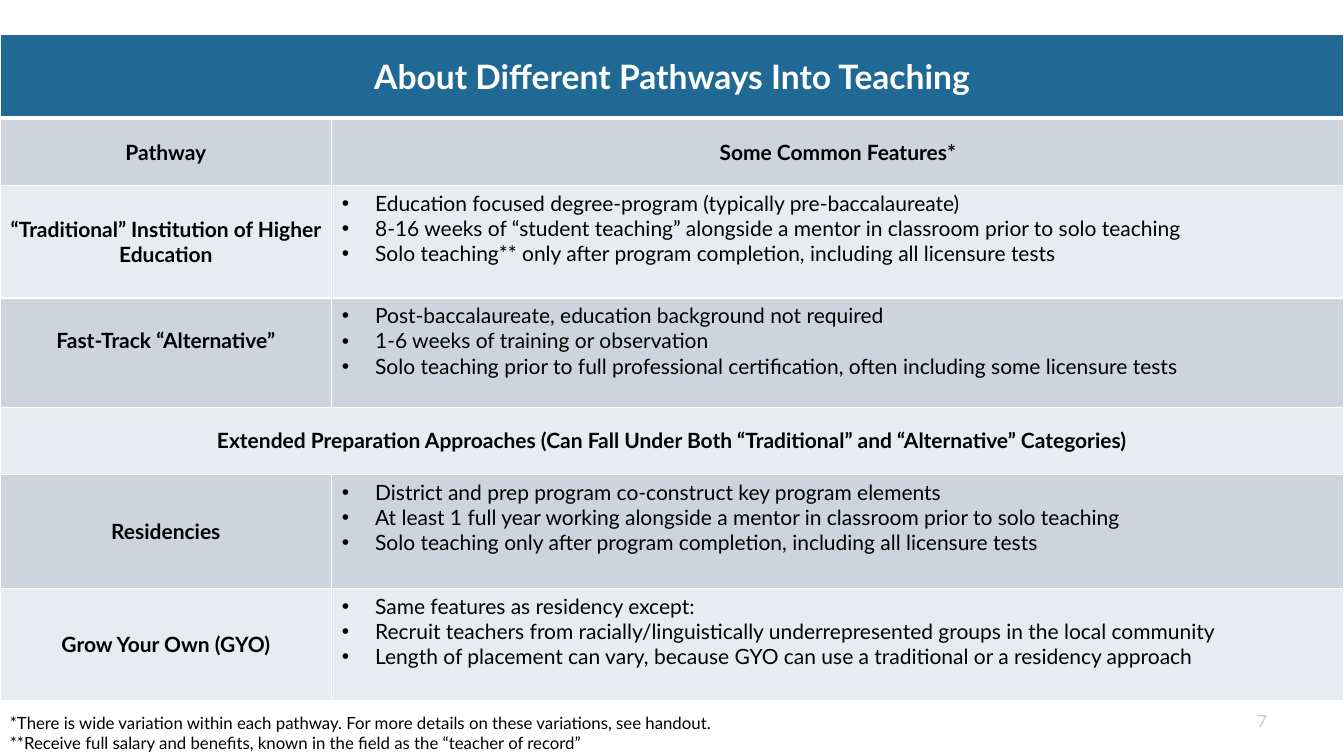
import pptx
import pptx.util
import pptx.dml.color
import pptx.enum.text
import pptx.oxml
import pptx.oxml.ns

Cm = pptx.util.Cm
Pt = pptx.util.Pt
RGBColor = pptx.dml.color.RGBColor
ALIGN = pptx.enum.text.PP_ALIGN
ANCHOR = pptx.enum.text.MSO_ANCHOR

WHITE = RGBColor(0xFF, 0xFF, 0xFF)
BLACK = RGBColor(0x00, 0x00, 0x00)
BLUE = RGBColor(0x20, 0x69, 0x95)
BAND_DARK = RGBColor(0xCD, 0xD4, 0xDD)
BAND_LIGHT = RGBColor(0xE8, 0xEB, 0xEF)
GRAY = RGBColor(0xC8, 0xC8, 0xC8)

FORMATS = {
    "title": {"size": Pt(24), "bold": True, "color": WHITE, "align": ALIGN.CENTER},
    "heading": {"size": Pt(15), "bold": True, "color": BLACK, "align": ALIGN.CENTER},
    "feature": {"size": Pt(15), "bold": False, "color": BLACK, "align": ALIGN.LEFT},
    "note": {"size": Pt(12), "bold": False, "color": BLACK, "align": ALIGN.LEFT},
    "number": {"size": Pt(12), "bold": False, "color": GRAY, "align": ALIGN.RIGHT},
}

ROWS = [
    (2.12, "About Different Pathways Into Teaching", None),
    (1.7, "Pathway", "Some Common Features*"),
    (2.83, "“Traditional” Institution of Higher Education", [
        "Education focused degree-program (typically pre-baccalaureate)",
        "8-16 weeks of “student teaching” alongside a mentor in classroom prior to solo teaching",
        "Solo teaching** only after program completion, including all licensure tests",
    ]),
    (2.75, "Fast-Track “Alternative”", [
        "Post-baccalaureate, education background not required",
        "1-6 weeks of training or observation",
        "Solo teaching prior to full professional certification, often including some licensure tests",
    ]),
    (1.7, "Extended Preparation Approaches (Can Fall Under Both “Traditional” and “Alternative” Categories)", None),
    (2.87, "Residencies", [
        "District and prep program co-construct key program elements",
        "At least 1 full year working alongside a mentor in classroom prior to solo teaching",
        "Solo teaching only after program completion, including all licensure tests",
    ]),
    (2.82, "Grow Your Own (GYO)", [
        "Same features as residency except:",
        "Recruit teachers from racially/linguistically underrepresented groups in the local community",
        "Length of placement can vary, because GYO can use a traditional or a residency approach",
    ]),
]
FOOTNOTES = [
    "*There is wide variation within each pathway. For more details on these variations, see handout.",
    "**Receive full salary and benefits, known in the field as the “teacher of record”",
]


def write_lines(frame, lines, kind):
    style = FORMATS[kind]
    frame.word_wrap = True
    for index, line in enumerate(lines):
        para = frame.paragraphs[0] if index == 0 else frame.add_paragraph()
        para.alignment = style["align"]
        if kind == "feature":
            properties = para._p.get_or_add_pPr()
            properties.set("marL", str(Cm(0.84)))
            properties.set("indent", str(-Cm(0.84)))
            namespace = pptx.oxml.ns.nsdecls("a")
            properties.append(pptx.oxml.parse_xml(f'<a:buFont {namespace} typeface="Arial"/>'))
            properties.append(pptx.oxml.parse_xml(f'<a:buChar {namespace} char="•"/>'))
        span = para.add_run()
        span.text = line
        span.font.name = "Lato"
        for name in ("size", "bold"):
            setattr(span.font, name, style[name])
        span.font.color.rgb = style["color"]


def draw_borders(cell, widths):
    properties = cell._tc.get_or_add_tcPr()
    for position, (side, width) in enumerate(widths.items()):
        properties.insert(position, pptx.oxml.parse_xml(
            f'<a:ln{side} {pptx.oxml.ns.nsdecls("a")} w="{Pt(width)}">'
            f'<a:solidFill><a:srgbClr val="{WHITE}"/></a:solidFill></a:ln{side}>'))


deck = pptx.Presentation()
deck.slide_width = Cm(33.87)
deck.slide_height = Cm(19.05)
page = deck.slides.add_slide(deck.slide_layouts[6])

number_box = page.shapes.add_textbox(Cm(24.28), Cm(17.65), Cm(7.9), Cm(1.02))
number_box.text_frame.vertical_anchor = ANCHOR.MIDDLE
write_lines(number_box.text_frame, ["7"], "number")

table_frame = page.shapes.add_table(len(ROWS), 2, Cm(0), Cm(0.86), Cm(33.87), Cm(16.79))
table = table_frame.table
table.columns[0].width = Cm(8.36)
table.columns[1].width = Cm(25.51)

for row_index, (height, pathway, features) in enumerate(ROWS):
    table.rows[row_index].height = Cm(height)
    left_cell, right_cell = table.rows[row_index].cells
    if row_index == 0:
        fill_color = BLUE
    else:
        fill_color = BAND_DARK if row_index % 2 else BAND_LIGHT
    borders = {"L": 1, "R": 1, "T": 3 if row_index == 1 else 1, "B": 3 if row_index == 0 else 1}
    for cell in (left_cell, right_cell):
        cell.fill.solid()
        cell.fill.fore_color.rgb = fill_color
        draw_borders(cell, borders)
        cell.vertical_anchor = ANCHOR.MIDDLE
    write_lines(left_cell.text_frame, [pathway], "title" if row_index == 0 else "heading")
    if features is None:
        left_cell.merge(right_cell)
    elif isinstance(features, str):
        write_lines(right_cell.text_frame, [features], "heading")
    else:
        right_cell.vertical_anchor = ANCHOR.TOP
        write_lines(right_cell.text_frame, features, "feature")

table.cell(3, 0).margin_bottom = Cm(0.76)

note_box = page.shapes.add_textbox(Cm(0), Cm(17.83), Cm(32.18), Cm(1.27))
note_box.text_frame.auto_size = pptx.enum.text.MSO_AUTO_SIZE.SHAPE_TO_FIT_TEXT
write_lines(note_box.text_frame, FOOTNOTES, "note")

deck.save("out.pptx")
